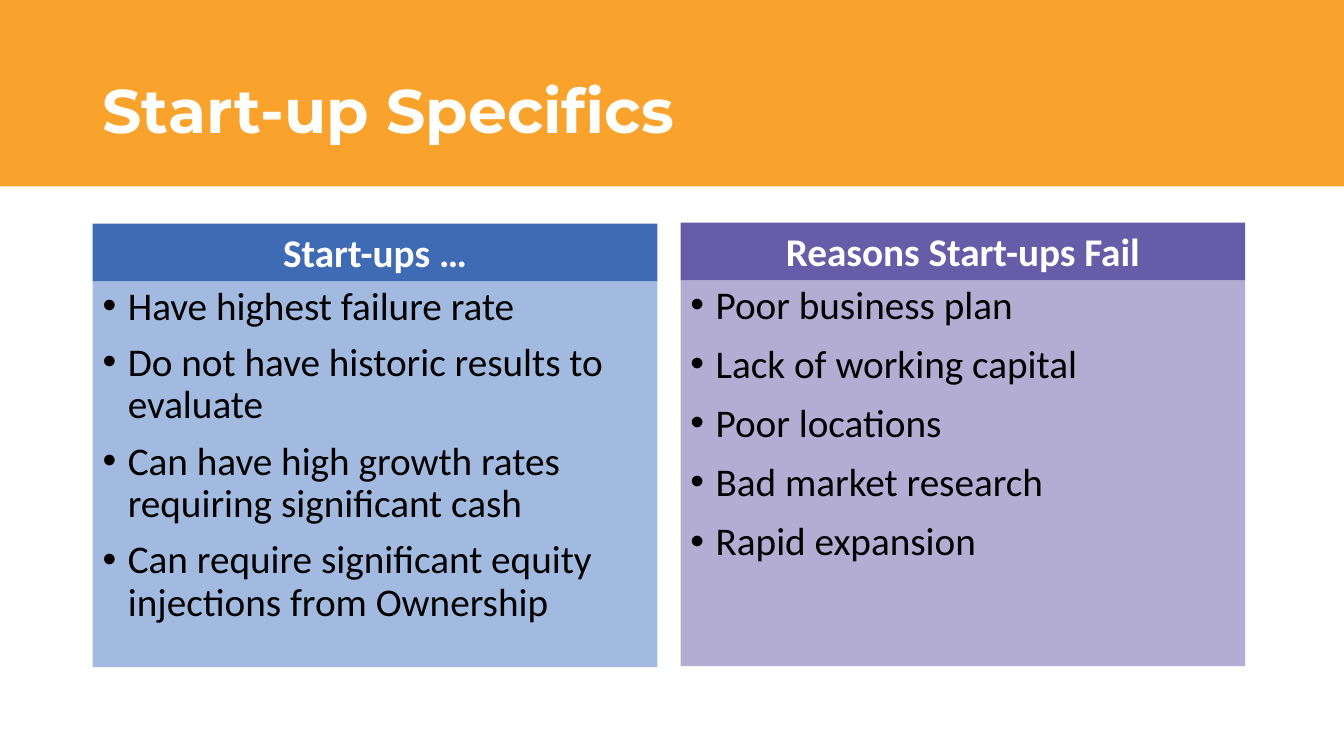
from pptx import Presentation
from pptx.dml.color import RGBColor
from pptx.enum.shapes import MSO_SHAPE
from pptx.enum.text import MSO_ANCHOR, PP_ALIGN
from pptx.util import Inches, Pt
from lxml.etree import SubElement
from pptx.oxml.ns import qn

ORANGE = RGBColor(0xFA, 0xA3, 0x2C)
BLUE = RGBColor(0x3E, 0x6B, 0xB4)
LIGHT_BLUE = RGBColor(0xA2, 0xBA, 0xDF)
PURPLE = RGBColor(0x67, 0x5C, 0xA8)
LIGHT_PURPLE = RGBColor(0xB3, 0xAD, 0xD3)
WHITE = RGBColor(0xFF, 0xFF, 0xFF)
BLACK = RGBColor(0x00, 0x00, 0x00)

TITLE = "Start-up Specifics"
COLUMNS = [
    {"heading": "Start-ups …", "dark": BLUE, "light": LIGHT_BLUE,
     "left": 0.92, "top": 2.22, "gap": 10,
     "points": ["Have highest failure rate",
                "Do not have historic results to evaluate",
                "Can have high growth rates requiring significant cash",
                "Can require significant equity injections from Ownership"]},
    {"heading": "Reasons Start-ups Fail", "dark": PURPLE, "light": LIGHT_PURPLE,
     "left": 6.75, "top": 2.21, "gap": 12,
     "points": ["Poor business plan", "Lack of working capital",
                "Poor locations", "Bad market research", "Rapid expansion"]},
]
SLIDE_W, SLIDE_H, BANNER_H = 13.33, 7.5, 1.85
COLUMN_W, HEADING_H, POINTS_H = 5.6, 0.57, 3.83
BULLET_INDENT = 0.25


def add_block(slide, left, top, width, height, color):
    block = slide.shapes.add_shape(MSO_SHAPE.RECTANGLE, Inches(left), Inches(top),
                                   Inches(width), Inches(height))
    block.shadow.inherit = False
    block.fill.solid()
    block.fill.fore_color.rgb = color
    block.line.fill.background()
    block.text_frame.word_wrap = True
    block.text_frame.vertical_anchor = MSO_ANCHOR.TOP
    return block.text_frame


def add_text(paragraph, text, size, font, color, bold=False):
    run = paragraph.add_run()
    run.text = text
    run.font.size = Pt(size)
    run.font.name = font
    run.font.color.rgb = color
    run.font.bold = bold


def set_bullet(paragraph):
    properties = paragraph._p.get_or_add_pPr()
    properties.set("marL", str(Inches(BULLET_INDENT)))
    properties.set("indent", str(-Inches(BULLET_INDENT)))
    SubElement(properties, qn("a:buFont")).set("typeface", "Arial")
    SubElement(properties, qn("a:buChar")).set("char", "•")


def add_column(slide, column):
    left, top = column["left"], column["top"]
    body = add_block(slide, left, top + HEADING_H, COLUMN_W, POINTS_H, column["light"])
    for index, point in enumerate(column["points"]):
        paragraph = body.add_paragraph() if index else body.paragraphs[0]
        set_bullet(paragraph)
        paragraph.alignment = PP_ALIGN.LEFT
        paragraph.line_spacing = 0.9
        if index:
            paragraph.space_before = Pt(column["gap"])
        add_text(paragraph, point, 28, "Calibri", BLACK)

    heading = add_block(slide, left, top, COLUMN_W, HEADING_H, column["dark"]).paragraphs[0]
    heading.alignment = PP_ALIGN.CENTER
    add_text(heading, column["heading"], 28, "Calibri", WHITE, bold=True)


def main():
    deck = Presentation()
    deck.slide_width, deck.slide_height = Inches(SLIDE_W), Inches(SLIDE_H)
    slide = deck.slides.add_slide(deck.slide_layouts[6])

    add_block(slide, 0, 0, SLIDE_W, BANNER_H, ORANGE)
    title = slide.shapes.add_textbox(Inches(0.92), Inches(0.4),
                                     Inches(11.5), Inches(1.45)).text_frame
    title.word_wrap = True
    title.vertical_anchor = MSO_ANCHOR.MIDDLE
    title.paragraphs[0].line_spacing = 0.9
    add_text(title.paragraphs[0], TITLE, 44, "Montserrat", WHITE, bold=True)

    for column in COLUMNS:
        add_column(slide, column)
    deck.save("out.pptx")


if __name__ == "__main__":
    main()
